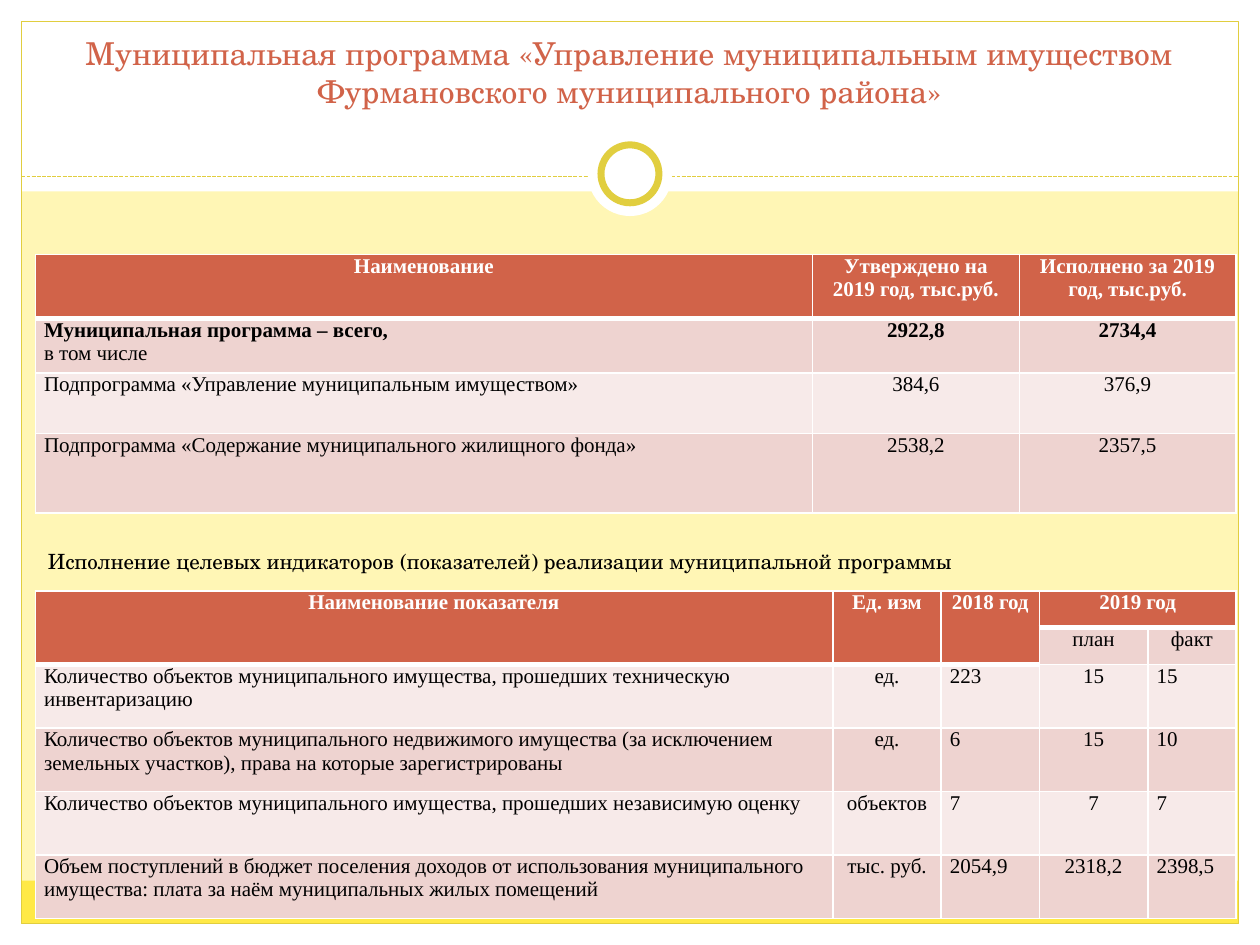
from dataclasses import dataclass

from lxml.etree import SubElement
from pptx import Presentation
from pptx.dml.color import RGBColor
from pptx.enum.dml import MSO_LINE
from pptx.enum.shapes import MSO_CONNECTOR, MSO_SHAPE
from pptx.enum.text import MSO_ANCHOR, MSO_AUTO_SIZE, PP_ALIGN
from pptx.oxml.ns import qn
from pptx.util import Inches, Pt


@dataclass(frozen=True)
class Theme:
    back: str = "FFF6B5"
    white: str = "FFFFFF"
    black: str = "000000"
    footer: str = "FFE947"
    gold: str = "E1CE3F"
    accent: str = "D16349"
    bands: tuple = ("F7EAE9", "EED3D0")
    head_font: str = "TeX Gyre Schola"
    table_font: str = "Times New Roman"
    title_size: int = 18
    text_size: int = 12


@dataclass(frozen=True)
class Box:
    left: float
    top: float
    width: float
    height: float

    def emu(self):
        return [Inches(v) for v in (self.left, self.top, self.width, self.height)]


THEME = Theme()
SLIDE = Box(0, 0, 10, 7.5)
ALIGN = {"l": PP_ALIGN.LEFT, "c": PP_ALIGN.CENTER, "j": PP_ALIGN.JUSTIFY}

BUDGET = [
    ["Наименование", "Утверждено на 2019 год, тыс.руб.", "Исполнено за 2019 год, тыс.руб."],
    ["Муниципальная программа – всего,\nв том числе", "2922,8", "2734,4"],
    ["Подпрограмма «Управление муниципальным имуществом»", "384,6", "376,9"],
    ["Подпрограмма «Содержание муниципального жилищного фонда»", "2538,2", "2357,5"],
]
INDICATORS = [
    ["Наименование показателя", "Ед. изм", "2018 год", "2019 год", ""],
    ["", "", "", "план", "факт"],
    ["Количество объектов муниципального имущества, прошедших техническую инвентаризацию",
     "ед.", "223", "15", "15"],
    ["Количество объектов муниципального недвижимого имущества (за исключением земельных "
     "участков), права на которые зарегистрированы", "ед.", "6", "15", "10"],
    ["Количество объектов муниципального имущества, прошедших независимую оценку",
     "объектов", "7", "7", "7"],
    ["Объем поступлений в бюджет поселения доходов от использования муниципального "
     "имущества: плата за наём муниципальных жилых помещений",
     "тыс. руб.", "2054,9", "2318,2", "2398,5"],
]


def rgb(value):
    return RGBColor.from_string(value)


def write(p, text, align, **font):
    p.alignment = align
    r = p.add_run()
    r.text = text
    r.font.color.rgb = rgb(font.pop("color"))
    for name, value in font.items():
        setattr(r.font, name, value)


def add_plain(s, kind, box, fill=None, line=None, weight=0.75):
    sp = s.shapes.add_shape(kind, *box.emu())
    sp.shadow.inherit = False
    if fill:
        sp.fill.solid()
        sp.fill.fore_color.rgb = rgb(fill)
    else:
        sp.fill.background()
    if line:
        sp.line.color.rgb = rgb(line)
        sp.line.width = Pt(weight)
    else:
        sp.line.fill.background()


def add_frame(s, box, margin=0.17, head=1.52, rule=1.4, footer=0.34):
    """Draw the white margins, footer strip, outline, dashed rule and ring."""
    right, bottom = box.left + box.width, box.top + box.height
    inner = Box(box.left + margin, box.top + margin,
                box.width - 2 * margin, box.height - 2 * margin)
    for edge in (Box(box.left, bottom - margin, box.width, margin),
                 Box(box.left, box.top, box.width, head),
                 Box(box.left, box.top, margin, box.height),
                 Box(right - margin, box.top, margin, box.height)):
        add_plain(s, MSO_SHAPE.RECTANGLE, edge, THEME.white)
    strip = Box(inner.left, bottom - margin - footer, inner.width, footer)
    add_plain(s, MSO_SHAPE.RECTANGLE, strip, THEME.footer)
    add_plain(s, MSO_SHAPE.RECTANGLE, inner, line=THEME.gold)

    y = Inches(box.top + rule)
    line = s.shapes.add_connector(MSO_CONNECTOR.STRAIGHT, Inches(inner.left), y,
                                  Inches(right - margin), y)
    line.line.color.rgb = rgb(THEME.gold)
    line.line.width = Pt(0.75)
    line.line.dash_style = MSO_LINE.SQUARE_DOT
    SubElement(line.element.spPr, qn("a:effectLst"))

    for size, color, weight in ((0.67, None, 0), (0.46, THEME.gold, 4)):
        ring = Box(box.left + (box.width - size) / 2, box.top + rule - 0.02 - size / 2, size, size)
        add_plain(s, MSO_SHAPE.OVAL, ring, THEME.white, color, weight)


def fill_placeholder(s, sp, box, text, size, color, align, anchor):
    """Place a placeholder above the frame and give it one formatted paragraph."""
    s.shapes.element.append(sp.element)
    sp.left, sp.top, sp.width, sp.height = box.emu()
    tf = sp.text_frame
    for name, value in dict(word_wrap=True, auto_size=MSO_AUTO_SIZE.NONE,
                            vertical_anchor=anchor).items():
        setattr(tf, name, value)
    write(tf.paragraphs[0], text, align, name=THEME.head_font, size=Pt(size), color=color)
    return tf.paragraphs[0]


def remove_bullet(p, indent):
    pPr = p._p.get_or_add_pPr()
    pPr.set("marL", str(Inches(indent)))
    pPr.set("indent", str(-Inches(indent)))
    SubElement(pPr, qn("a:buNone"))


def style_cell(cell, fill, bottom):
    tcPr = cell._tc.get_or_add_tcPr()
    for side, weight in dict(L=1, R=1, T=1, B=bottom).items():
        ln = SubElement(tcPr, qn(f"a:ln{side}"), w=str(Pt(weight)))
        SubElement(SubElement(ln, qn("a:solidFill")), qn("a:srgbClr"), val=THEME.white)
    cell.fill.solid()
    cell.fill.fore_color.rgb = rgb(fill)
    for name, value in dict(left=0.07, right=0.07, top=0, bottom=0).items():
        setattr(cell, f"margin_{name}", Inches(value))


def add_table(s, box, data, cols, rows, aligns, heads=1, merges=(), total=None):
    """Columns and rows are weights shared out over the box."""
    table = s.shapes.add_table(len(rows), len(cols), *box.emu()).table
    for col, weight in zip(table.columns, cols):
        col.width = Inches(box.width * weight / sum(cols))
    for row, weight in zip(table.rows, rows):
        row.height = Inches(box.height * weight / sum(rows))
    for first, last in merges:
        table.cell(*first).merge(table.cell(*last))

    for i, values in enumerate(data):
        for j, text in enumerate(values):
            cell = table.cell(i, j)
            is_head = i == 0 or cell.is_spanned
            style_cell(cell, THEME.accent if is_head else THEME.bands[i % 2], 3 if is_head else 1)
            if cell.is_spanned:
                continue
            tf = cell.text_frame
            for k, part in enumerate(text.split("\n")):
                p = tf.add_paragraph() if k else tf.paragraphs[0]
                write(p, part, ALIGN["c" if i < heads else aligns[j]],
                      name=THEME.table_font, size=Pt(THEME.text_size),
                      bold=is_head or (i == total and k == 0),
                      color=THEME.white if is_head else THEME.black)


def build_program_slide(prs):
    s = prs.slides.add_slide(prs.slide_layouts[1])
    s.background.fill.solid()
    s.background.fill.fore_color.rgb = rgb(THEME.back)
    title, body = s.placeholders
    add_frame(s, SLIDE)
    fill_placeholder(s, title, Box(0.33, 0.25, 9.33, 0.67),
                     "Муниципальная программа «Управление муниципальным имуществом "
                     "Фурмановского муниципального района»",
                     THEME.title_size, THEME.accent, PP_ALIGN.CENTER, MSO_ANCHOR.BOTTOM)
    add_table(s, Box(0.28, 2.02, 9.53, 2.05), BUDGET, (6.17, 1.64, 1.72),
              (0.51, 0.43, 0.48, 0.63), "jcc", total=1)
    p = fill_placeholder(s, body, Box(0.28, 4.3, 9.3, 0.67),
                         "Исполнение целевых индикаторов (показателей) реализации "
                         "муниципальной программы",
                         THEME.text_size, THEME.black, PP_ALIGN.LEFT, MSO_ANCHOR.TOP)
    remove_bullet(p, 0.3)
    add_table(s, Box(0.28, 4.69, 9.53, 2.6), INDICATORS, (6.33, 0.86, 0.78, 0.86, 0.7),
              [0.29] * 2 + [0.5] * 4, "lclcl", heads=2,
              merges=[((0, j), (1, j)) for j in range(3)] + [((0, 3), (0, 4))])


def main():
    prs = Presentation()
    prs.slide_width, prs.slide_height = Inches(SLIDE.width), Inches(SLIDE.height)
    build_program_slide(prs)
    prs.save("out.pptx")


if __name__ == "__main__":
    main()
